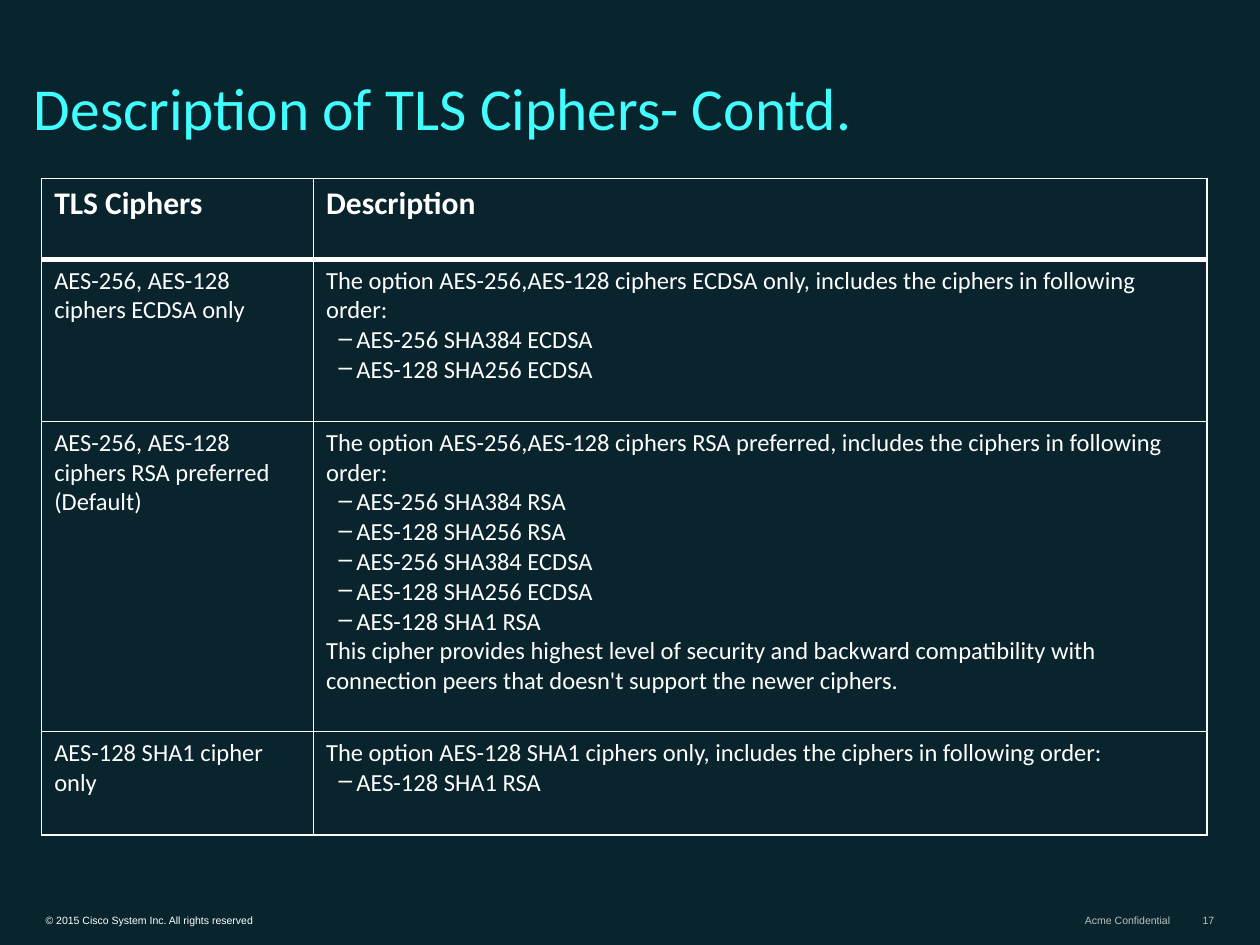
import pptx
import pptx.util
import pptx.dml.color
import pptx.enum.text
import pptx.oxml
import pptx.oxml.ns
from pptx.util import Cm, Pt

PP_ALIGN = pptx.enum.text.PP_ALIGN
ANCHOR = pptx.enum.text.MSO_ANCHOR

COLORS = {
    "background": "08252E",
    "cell": "09242D",
    "title": "40FFFE",
    "text": "FFFFFF",
    "muted": "C0C0C0",
}

# Content: items starting with "– " become dashed list entries
TITLE = "Description of TLS Ciphers- Contd."
HEADER = ("TLS Ciphers", ["Description"])
CIPHERS = [
    ("AES-256, AES-128 ciphers ECDSA only", [
        "The option AES-256,AES-128 ciphers ECDSA only, includes the ciphers in following order:",
        "– AES-256 SHA384 ECDSA",
        "– AES-128 SHA256 ECDSA",
    ]),
    ("AES-256, AES-128 ciphers RSA preferred (Default)", [
        "The option AES-256,AES-128 ciphers RSA preferred, includes the ciphers in following order:",
        "– AES-256 SHA384 RSA",
        "– AES-128 SHA256 RSA",
        "– AES-256 SHA384 ECDSA",
        "– AES-128 SHA256 ECDSA",
        "– AES-128 SHA1 RSA",
        "This cipher provides highest level of security and backward compatibility with "
        "connection peers that doesn't support the newer ciphers.",
    ]),
    ("AES-128 SHA1 cipher only", [
        "The option AES-128 SHA1 ciphers only, includes the ciphers in following order:",
        "– AES-128 SHA1 RSA",
    ]),
]
COL_WIDTHS = [5.48, 18.01]
ROW_HEIGHTS = [1.63, 3.27, 6.25, 2.08]
# Footer: text, left, width, colour, alignment
FOOTER = [
    ("© 2015 Cisco System Inc. All rights reserved", 0.69, 9.5, "text", PP_ALIGN.LEFT),
    ("Acme Confidential", 21.56, 2.26, "muted", PP_ALIGN.RIGHT),
    ("17", 24.0, 0.71, "muted", PP_ALIGN.RIGHT),
]


def rgb(name):
    return pptx.dml.color.RGBColor.from_string(COLORS[name])


def add_run(p, text, size, color, font="Calibri", bold=False):
    r = p.add_run()
    r.text = text
    r.font.name, r.font.size, r.font.bold = font, Pt(size), bold
    r.font.color.rgb = rgb(color)


def add_dash(p):
    pPr = p._p.get_or_add_pPr()
    pPr.set("marL", str(Cm(0.61)))
    pPr.set("indent", str(-Cm(0.36)))
    bullet = pptx.oxml.parse_xml(f'<a:buChar {pptx.oxml.ns.nsdecls("a")} char="–"/>')
    pPr.append(bullet)


def set_borders(cell, widths):
    tcPr = cell._tc.get_or_add_tcPr()
    for side, width in widths.items():
        tcPr.append(pptx.oxml.parse_xml(
            f'<a:ln{side} {pptx.oxml.ns.nsdecls("a")} w="{Pt(width)}"><a:solidFill>'
            f'<a:srgbClr val="{COLORS["text"]}"/></a:solidFill></a:ln{side}>'))


def fill_cell(cell, items, size, bold, borders):
    set_borders(cell, borders)
    cell.fill.solid()
    cell.fill.fore_color.rgb = rgb("cell")
    tf = cell.text_frame
    for i, item in enumerate(items):
        p = tf.add_paragraph() if i else tf.paragraphs[0]
        if item.startswith("– "):
            add_dash(p)
        add_run(p, item.removeprefix("– "), size, "text", bold=bold)


prs = pptx.Presentation()
prs.slide_width, prs.slide_height = Cm(25.4), Cm(19.05)
s = prs.slides.add_slide(prs.slide_layouts[5])
s.background.fill.solid()
s.background.fill.fore_color.rgb = rgb("background")

# Title
title = s.shapes.title
title.left, title.top, title.width, title.height = Cm(0.43), Cm(0.64), Cm(23.85), Cm(2.34)
tf = title.text_frame
tf.vertical_anchor = ANCHOR.BOTTOM
p = tf.paragraphs[0]
p.alignment, p.line_spacing = PP_ALIGN.LEFT, 0.8
add_run(p, TITLE, 34, "title")

# Cipher table
rows = [HEADER] + CIPHERS
table = s.shapes.add_table(len(rows), len(COL_WIDTHS), Cm(0.84), Cm(3.6),
                           Cm(sum(COL_WIDTHS)), Cm(sum(ROW_HEIGHTS))).table
table.first_row = table.horz_banding = False
for column, width in zip(table.columns, COL_WIDTHS):
    column.width = Cm(width)
for i, (name, description) in enumerate(rows):
    table.rows[i].height = Cm(ROW_HEIGHTS[i])
    is_header = i == 0
    borders = {"L": 1, "R": 1, "T": 3 if i == 1 else 1, "B": 3 if is_header else 1}
    for j, items in enumerate(([name], description)):
        fill_cell(table.cell(i, j), items, 18 if is_header else 14, is_header, borders)

# Footer
for text, left, width, color, align in FOOTER:
    tf = s.shapes.add_textbox(Cm(left), Cm(18.29), Cm(width), Cm(0.48)).text_frame
    tf.word_wrap = align == PP_ALIGN.LEFT
    tf.vertical_anchor = ANCHOR.BOTTOM
    tf.margin_left = tf.margin_right = Cm(0.23)
    tf.margin_top = tf.margin_bottom = Cm(0.1)
    tf.paragraphs[0].alignment = align
    add_run(tf.paragraphs[0], text, 6, color, font="Arial")

prs.save("out.pptx")
